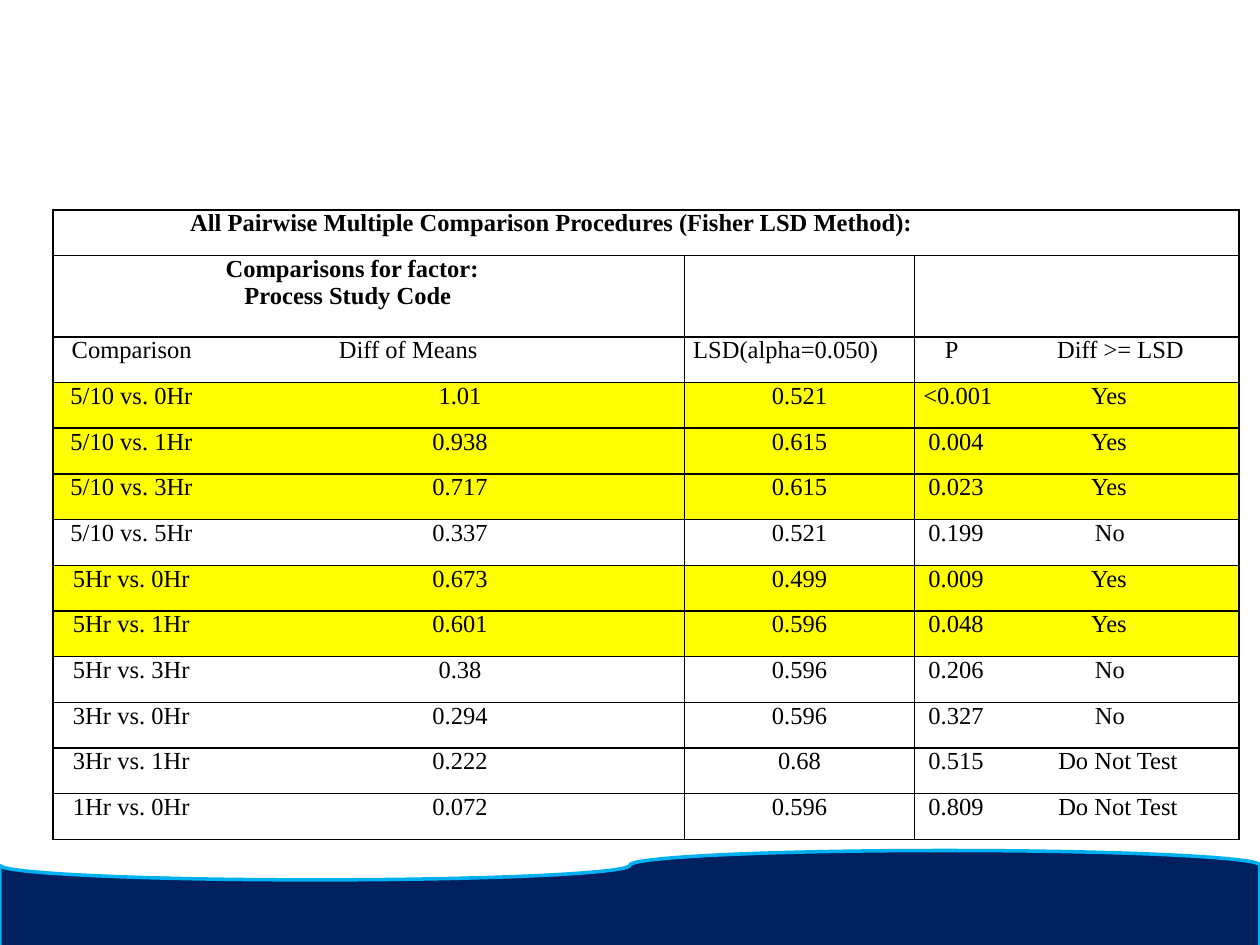
import dataclasses

import lxml.etree
import pptx
import pptx.dml.color
import pptx.enum.shapes
import pptx.enum.text
import pptx.oxml.ns
import pptx.util

Pt = pptx.util.Pt


@dataclasses.dataclass(frozen=True)
class Theme:
    """Colours, font and sizes of the slide."""
    ink: str = "000000"
    mark: str = "FFFF00"
    navy: str = "002060"
    sky: str = "00B0F0"
    font: str = "Times New Roman"
    size: float = 14
    rule: float = 1
    edge: float = 2


THEME = Theme()
TITLE = "All Pairwise Multiple Comparison Procedures (Fisher LSD Method):"
FACTOR = "Comparisons for factor: Process Study Code"
HEADERS = ["Comparison", "Diff of Means", "LSD(alpha=0.050)", "P", "Diff >= LSD"]
HEADER_INDENTS = [10.8, 67, 5, 17.3, 2.9]
RESULTS = [
    ("5/10 vs. 0Hr", "1.01", "0.521", "<0.001", "Yes"),
    ("5/10 vs. 1Hr", "0.938", "0.615", "0.004", "Yes"),
    ("5/10 vs. 3Hr", "0.717", "0.615", "0.023", "Yes"),
    ("5/10 vs. 5Hr", "0.337", "0.521", "0.199", "No"),
    ("5Hr vs. 0Hr", "0.673", "0.499", "0.009", "Yes"),
    ("5Hr vs. 1Hr", "0.601", "0.596", "0.048", "Yes"),
    ("5Hr vs. 3Hr", "0.38", "0.596", "0.206", "No"),
    ("3Hr vs. 0Hr", "0.294", "0.596", "0.327", "No"),
    ("3Hr vs. 1Hr", "0.222", "0.68", "0.515", "Do Not Test"),
    ("1Hr vs. 0Hr", "0.072", "0.596", "0.809", "Do Not Test"),
]
VERDICT_INDENTS = {"Yes": 22.3, "No": 24.5, "Do Not Test": 3.6}
COLUMNS = [96.5, 264.5, 131.5, 78.5, 107]
FACTOR_HEIGHT = 46.4


def rgb(value):
    """Return a colour from its hex text."""
    return pptx.dml.color.RGBColor.from_string(value)


def write(tf, text, bold=False, left=0, hang=0, center=False):
    """Put one formatted paragraph in a text frame."""
    p = tf.paragraphs[0]
    pPr = p._p.get_or_add_pPr()
    pPr.set("marL", str(Pt(left)))
    pPr.set("indent", str(Pt(-hang)))
    align = pptx.enum.text.PP_ALIGN
    p.alignment = align.CENTER if center else align.LEFT
    r = p.add_run()
    r.text = text
    r.font.name = THEME.font
    r.font.size = Pt(THEME.size)
    r.font.bold = bold
    r.font.color.rgb = rgb(THEME.ink)


def set_borders(cell, sides):
    """Rule the named sides of a cell and clear the others."""
    tcPr = cell._tc.get_or_add_tcPr()
    qn = pptx.oxml.ns.qn
    for side in "LRTB":
        ln = lxml.etree.SubElement(tcPr, qn(f"a:ln{side}"), w=str(Pt(THEME.rule)))
        if side in sides:
            fill = lxml.etree.SubElement(ln, qn("a:solidFill"))
            lxml.etree.SubElement(fill, qn("a:srgbClr"), val=THEME.ink)
        else:
            lxml.etree.SubElement(ln, qn("a:noFill"))


def style_cell(cell, sides, marked):
    """Set the margins, borders and fill of a cell."""
    cell.margin_left = cell.margin_right = cell.margin_top = cell.margin_bottom = 0
    set_borders(cell, sides)
    if marked:
        cell.fill.solid()
        cell.fill.fore_color.rgb = rgb(THEME.mark)
    else:
        cell.fill.background()


def result_formats(row):
    """Return the paragraph format of each cell in a result row."""
    return [
        dict(left=10.1 if row[0].startswith("5/10") else 11.5),
        dict(left=7.9, center=True),
        dict(center=True),
        dict(left=5 if row[3].startswith("<") else 7.9),
        dict(left=VERDICT_INDENTS[row[4]]),
    ]


def add_comparison_table(s, x, y, w, h):
    """Place the table of pairwise comparisons in a box."""
    count = len(RESULTS) + 3
    table = s.shapes.add_table(count, len(COLUMNS), Pt(x), Pt(y), Pt(w), Pt(h)).table
    table.first_row = table.horz_banding = False
    for column, width in zip(table.columns, COLUMNS):
        column.width = Pt(width * w / sum(COLUMNS))
    for i, row in enumerate(table.rows):
        row.height = Pt(FACTOR_HEIGHT if i == 1 else (h - FACTOR_HEIGHT) / (count - 1))
        marked = i > 2 and RESULTS[i - 3][4] == "Yes"
        for cell, sides in zip(row.cells, ("L", "R", "LR", "L", "R")):
            style_cell(cell, "LRTB" if i == 0 else sides + "TB", marked)
    table.cell(0, 0).merge(table.cell(0, len(COLUMNS) - 1))
    write(table.cell(0, 0).text_frame, TITLE, bold=True, left=78.5)
    factor = table.cell(1, 1)
    factor.margin_right = Pt(94)
    write(factor.text_frame, FACTOR, bold=True, left=13, hang=10.8)
    for j, (text, left) in enumerate(zip(HEADERS, HEADER_INDENTS)):
        write(table.cell(2, j).text_frame, text, left=left)
    for i, row in enumerate(RESULTS, 3):
        for j, (text, style) in enumerate(zip(row, result_formats(row))):
            write(table.cell(i, j).text_frame, text, **style)


def add_wave(s, x, y, w, h):
    """Place the wavy band in a box."""
    shape = pptx.enum.shapes.MSO_SHAPE.WAVE
    shape = pptx.enum.shapes.MSO_SHAPE.FLOWCHART_PUNCHED_TAPE
    sp = s.shapes.add_shape(shape, Pt(x), Pt(y), Pt(w), Pt(h))
    sp.shadow.inherit = False
    sp.fill.solid()
    sp.fill.fore_color.rgb = rgb(THEME.navy)
    sp.line.color.rgb = rgb(THEME.sky)
    sp.line.width = Pt(THEME.edge)


def main():
    """Build the slide and save it."""
    prs = pptx.Presentation()
    prs.slide_width, prs.slide_height = Pt(720), Pt(540)
    s = prs.slides.add_slide(prs.slide_layouts[6])
    add_wave(s, 0, 486, 720, 84)
    add_comparison_table(s, 30.2, 120, 678, 360)
    prs.save("out.pptx")


if __name__ == "__main__":
    main()
